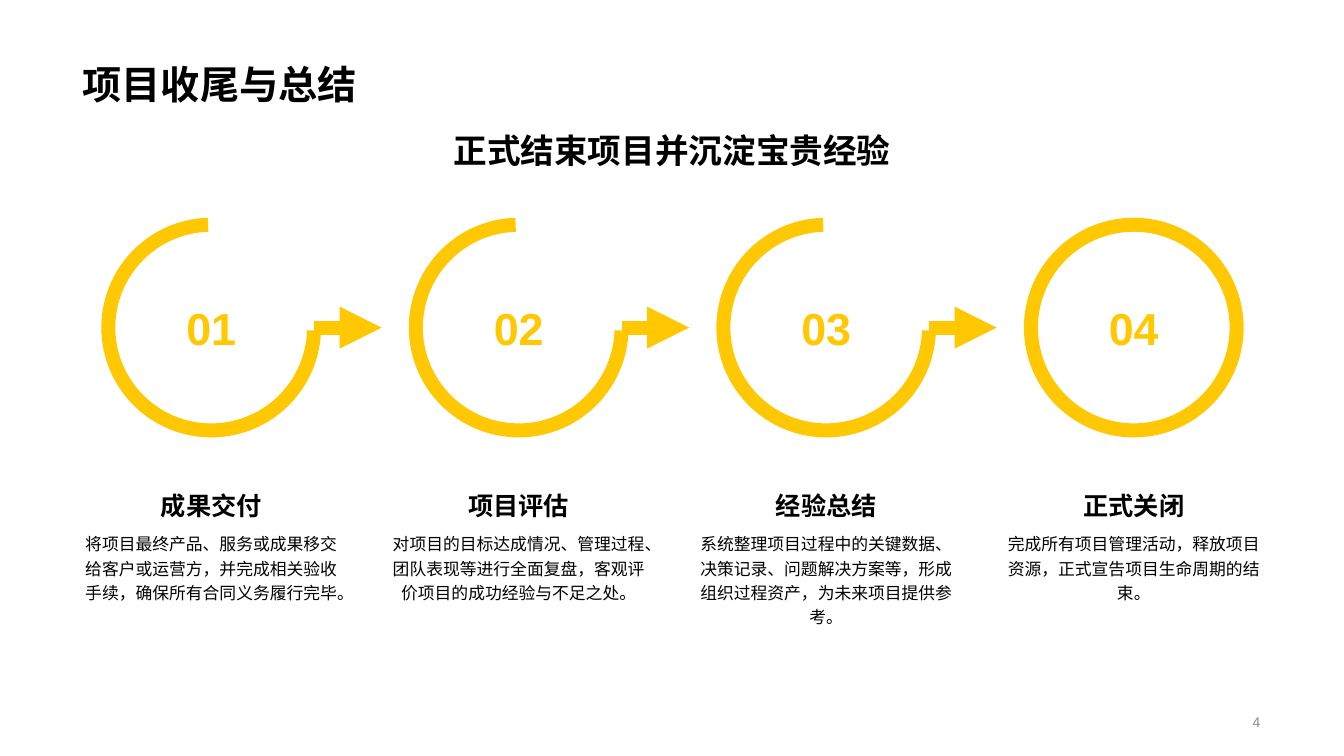
import pptx
import pptx.dml.color
import pptx.enum.shapes
import pptx.enum.text
import pptx.oxml.ns
import pptx.util
from dataclasses import dataclass
from lxml import etree


@dataclass(frozen=True)
class Theme:
    accent: str = "FFC803"
    ink: str = "000000"
    muted: str = "8C8C8C"
    chinese: str = "Noto Sans CJK SC"
    latin: str = "Arial"
    title: int = 28
    subtitle: int = 24
    number: int = 32
    heading: int = 18
    body: int = 12
    page: int = 10
    stroke: int = 10


theme = Theme()
Inches = pptx.util.Inches
Anchor = pptx.enum.text.MSO_ANCHOR
Align = pptx.enum.text.PP_ALIGN
Preset = pptx.enum.shapes.MSO_SHAPE
qn = pptx.oxml.ns.qn


def write(shape, text, size, font, color, bold=False, align=Align.CENTER, anchor=Anchor.TOP):
    """Fill a shape with one formatted paragraph and return the paragraph."""
    frame = shape.text_frame
    frame.text = text
    frame.word_wrap = True
    frame.auto_size = pptx.enum.text.MSO_AUTO_SIZE.NONE
    frame.vertical_anchor = anchor
    paragraph = frame.paragraphs[0]
    paragraph.alignment = align
    run = paragraph.runs[0]
    run.font.size = pptx.util.Pt(size)
    run.font.name = font
    run.font.bold = bold
    run.font.color.rgb = pptx.dml.color.RGBColor.from_string(color)
    east_asian = etree.SubElement(run.font._element, qn("a:ea"))
    east_asian.set("typeface", font)
    return paragraph


def stroke(shape):
    shape.line.color.rgb = pptx.dml.color.RGBColor.from_string(theme.accent)
    shape.line.width = pptx.util.Pt(theme.stroke)


steps = [
    ("成果交付", "将项目最终产品、服务或成果移交给客户或运营方，并完成相关验收手续，确保所有合同义务履行完毕。"),
    ("项目评估", "对项目的目标达成情况、管理过程、团队表现等进行全面复盘，客观评价项目的成功经验与不足之处。"),
    ("经验总结", "系统整理项目过程中的关键数据、决策记录、问题解决方案等，形成组织过程资产，为未来项目提供参考。"),
    ("正式关闭", "完成所有项目管理活动，释放项目资源，正式宣告项目生命周期的结束。"),
]

presentation = pptx.Presentation()
presentation.slide_width = Inches(13.33)
presentation.slide_height = Inches(7.5)
slide = presentation.slides.add_slide(presentation.slide_layouts[5])
shapes = slide.shapes

# Grid, in inches
margin = 0.72
content_width = 13.33 - 2 * margin
column_width = 2.71
first_column = 0.74
column_pitch = (content_width - column_width) / (len(steps) - 1) - 0.01
ring_size = 2.04
ring_top = 2.23
ring_inset = (column_width - ring_size) / 2
arrow_length = 0.67
heading_top, heading_height = 4.54, 0.67
body_height = 1.5

title = shapes.title
title.left, title.top = Inches(margin), Inches(0.14)
title.width, title.height = Inches(content_width), Inches(0.98)
write(title, "项目收尾与总结", theme.title, theme.chinese, theme.ink, True, Align.LEFT, Anchor.BOTTOM)

subtitle = shapes.add_textbox(Inches(margin), Inches(1.24), Inches(content_width), Inches(0.5))
write(subtitle, "正式结束项目并沉淀宝贵经验", theme.subtitle, theme.chinese, theme.ink, True)

for index, (heading_text, body_text) in enumerate(steps):
    is_last = index == len(steps) - 1
    column_left = first_column + index * column_pitch
    ring_left = column_left + ring_inset

    if not is_last:
        arrow_left = Inches(ring_left + ring_size)
        arrow_middle = Inches(ring_top + ring_size / 2)
        arrow = shapes.add_connector(
            pptx.enum.shapes.MSO_CONNECTOR.STRAIGHT,
            arrow_left, arrow_middle, arrow_left + Inches(arrow_length), arrow_middle)
        stroke(arrow)
        etree.SubElement(arrow.line._get_or_add_ln(), qn("a:tailEnd")).set("type", "triangle")
        etree.SubElement(arrow._element.spPr, qn("a:effectLst"))

    ring = shapes.add_shape(
        Preset.OVAL if is_last else Preset.ARC,
        Inches(ring_left), Inches(ring_top), Inches(ring_size), Inches(ring_size))
    if not is_last:
        ring.adjustments[0] = 0.996
        ring.adjustments[1] = 160.959
    ring.fill.background()
    ring.shadow.inherit = False
    stroke(ring)
    write(ring, f"{index + 1:02d}", theme.number, theme.latin, theme.accent, True, anchor=Anchor.MIDDLE)

    heading = shapes.add_textbox(
        Inches(column_left), Inches(heading_top), Inches(column_width), Inches(heading_height))
    write(heading, heading_text, theme.heading, theme.chinese, theme.ink, True, anchor=Anchor.BOTTOM)

    body = shapes.add_textbox(
        Inches(column_left), Inches(heading_top + heading_height), Inches(column_width), Inches(body_height))
    write(body, body_text, theme.body, theme.chinese, theme.ink).line_spacing = 1.2

page_number = shapes.add_textbox(Inches(8.6), Inches(7.01), Inches(4), Inches(0.3))
write(page_number, "4", theme.page, theme.latin, theme.muted, align=Align.RIGHT, anchor=Anchor.MIDDLE)

presentation.save("out.pptx")
